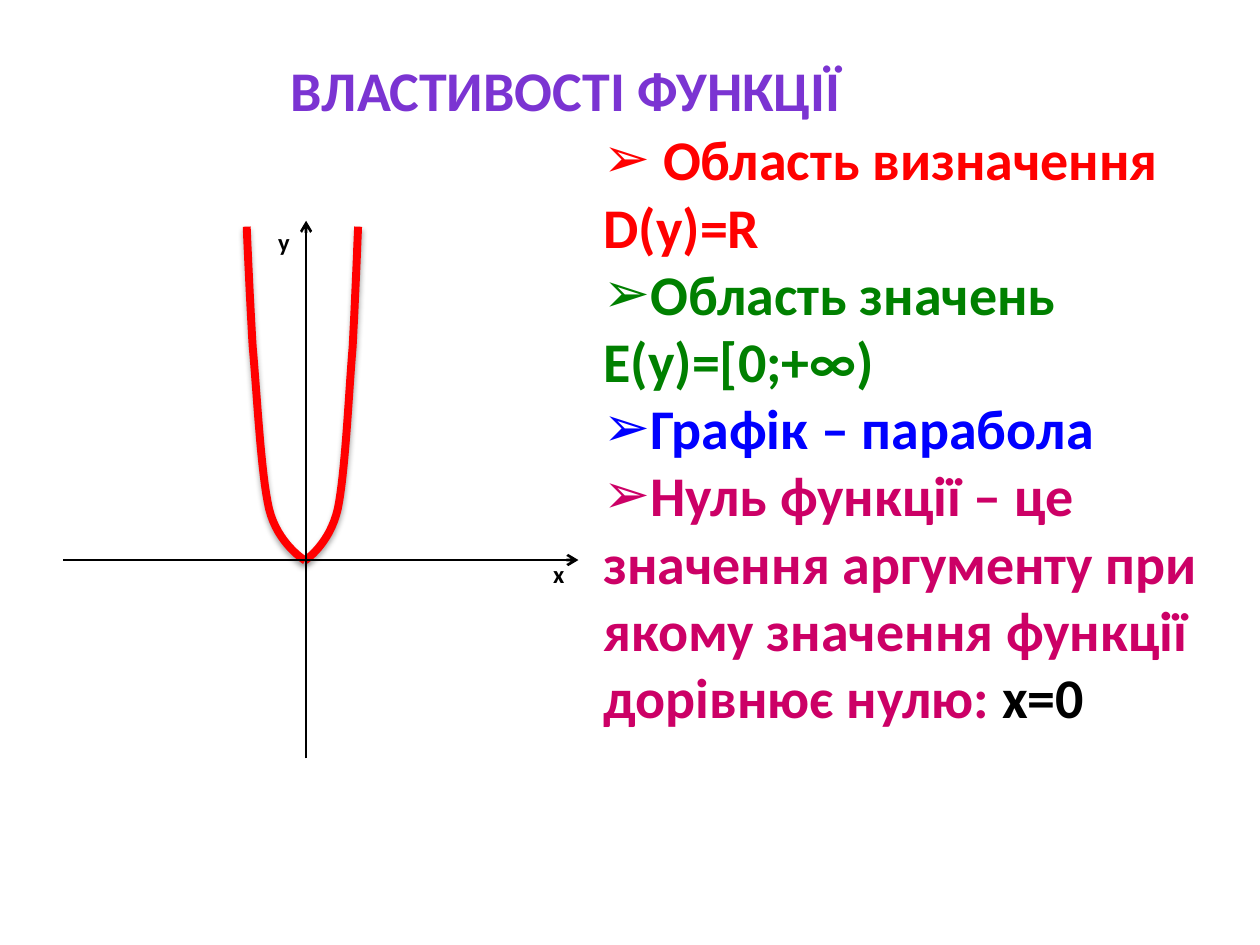
import lxml.etree
import pptx
import pptx.dml.color
import pptx.enum.shapes
import pptx.enum.text
import pptx.oxml.ns
import pptx.util

Cm = pptx.util.Cm
Pt = pptx.util.Pt
qn = pptx.oxml.ns.qn

COLORS = {
    "title": "7B34D2",
    "domain": "FF0000",
    "range": "008000",
    "graph": "0000FF",
    "zero": "CC0066",
    "axis": "000000",
    "curve": "FF0000",
}


def add_xml(parent, tag, **attributes):
    return lxml.etree.SubElement(parent, qn(tag), attributes)


def add_run(paragraph, text, size, color):
    run = paragraph.add_run()
    run.text = text
    for name, value in {"name": "Calibri", "size": Pt(size), "bold": True}.items():
        setattr(run.font, name, value)
    run.font.color.rgb = pptx.dml.color.RGBColor.from_string(COLORS[color])


presentation = pptx.Presentation()
presentation.slide_width = Cm(25.4)
presentation.slide_height = Cm(19.05)
slide = presentation.slides.add_slide(presentation.slide_layouts[1])
title = slide.shapes.title
body = slide.placeholders[1]

placeholder_boxes = [(title, (5.16, 0.99, 12.5, 1.63)), (body, (11.91, 2.39, 13.49, 13.94))]
frame_format = {
    "word_wrap": True,
    "auto_size": pptx.enum.text.MSO_AUTO_SIZE.NONE,
    "vertical_anchor": pptx.enum.text.MSO_ANCHOR.TOP,
}
for shape, box in placeholder_boxes:
    for name, value in zip(("left", "top", "width", "height"), box):
        setattr(shape, name, Cm(value))
    for name, value in frame_format.items():
        setattr(shape.text_frame, name, value)

heading = title.text_frame.paragraphs[0]
heading.alignment = pptx.enum.text.PP_ALIGN.CENTER
add_run(heading, "ВЛАСТИВОСТІ ФУНКЦІЇ", 32, "title")

properties = [
    [(" Область визначення D(y)=R", "domain")],
    [("Область значень Е(у)=[0;+∞)", "range")],
    [("Графік – парабола", "graph")],
    [
        ("Нуль функції – це значення аргументу при якому значення функції дорівнює нулю: ", "zero"),
        ("х=0", "axis"),
    ],
]
for index, runs in enumerate(properties):
    frame = body.text_frame
    paragraph = frame.add_paragraph() if index else frame.paragraphs[0]
    paragraph.space_before = Pt(0)
    paragraph_properties = paragraph._p.get_or_add_pPr()
    paragraph_properties.set("marL", "0")
    paragraph_properties.set("indent", "0")
    add_xml(paragraph_properties, "a:buFont", typeface="Calibri")
    add_xml(paragraph_properties, "a:buChar", char="➢")
    for text, color in runs:
        add_run(paragraph, text, 32, color)

vertex_x = 6.15
branch_controls = [
    (1.07, 4.57), (1.04, 5.31), (1.01, 6.05), (0.96, 6.99), (0.88, 7.95),
    (0.81, 9.55), (0.66, 10.26), (0.5, 10.97), (0, 11.3), (0, 11.3),
]
steps = 16
branch_points = [branch_controls[0]]
for start in (0, 3, 6):
    for step in range(1, steps + 1):
        t = step / steps
        weights = ((1 - t) ** 3, 3 * t * (1 - t) ** 2, 3 * t**2 * (1 - t), t**3)
        controls = branch_controls[start:start + 4]
        branch_points.append(
            tuple(sum(w * point[axis] for w, point in zip(weights, controls)) for axis in (0, 1))
        )

for spread in (1, -1.1):
    points = [(Cm(vertex_x + spread * x), Cm(y)) for x, y in branch_points]
    builder = slide.shapes.build_freeform(*points[0])
    builder.add_line_segments(points[1:], close=False)
    branch = builder.convert_to_shape()
    branch.fill.background()
    branch.line.width = Pt(4.5)
    branch.line.color.rgb = pptx.dml.color.RGBColor.from_string(COLORS["curve"])
    branch.shadow.inherit = False
    effects = branch.element.spPr.find(qn("a:effectLst"))
    shadow = add_xml(
        effects, "a:outerShdw", blurRad=str(Pt(3.1)), dist=str(Pt(1.8)), dir="5400000", rotWithShape="0"
    )
    add_xml(add_xml(shadow, "a:srgbClr", val="000000"), "a:alpha", val="35000")

axes = [(1.27, 11.29, 11.66, 11.29), (6.17, 15.29, 6.17, 4.45)]
for ends in axes:
    axis = slide.shapes.add_connector(
        pptx.enum.shapes.MSO_CONNECTOR.STRAIGHT, *[Cm(value) for value in ends]
    )
    axis.line.width = Pt(1.5)
    axis.line.color.rgb = pptx.dml.color.RGBColor.from_string(COLORS["axis"])
    add_xml(axis.element.spPr.find(qn("a:ln")), "a:tailEnd", type="arrow")
    add_xml(axis.element.spPr, "a:effectLst")

for letter, left, top in [("х", 10.9, 11.15), ("у", 5.36, 4.45)]:
    label = slide.shapes.add_textbox(Cm(left), Cm(top), Cm(0.74), Cm(0.86))
    label.text_frame.word_wrap = False
    add_run(label.text_frame.paragraphs[0], letter, 14, "axis")

presentation.save("out.pptx")
